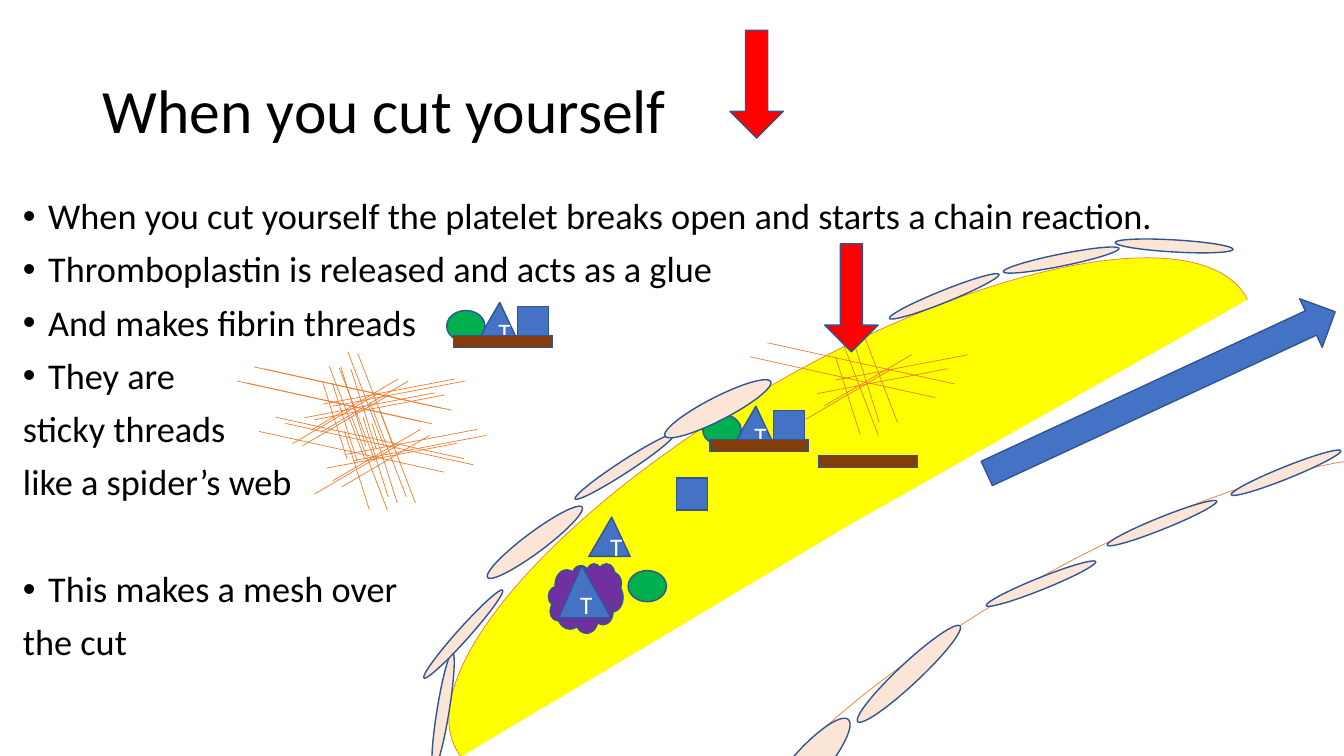
from dataclasses import dataclass

from lxml.etree import SubElement
from pptx import Presentation
from pptx.dml.color import RGBColor
from pptx.enum.shapes import MSO_CONNECTOR, MSO_SHAPE
from pptx.enum.text import MSO_ANCHOR, PP_ALIGN
from pptx.oxml.ns import qn
from pptx.slide import Slide
from pptx.util import Inches, Pt

COLORS = {
    "text": "000000", "letter": "FFFFFF", "edge": "325491", "thread": "ED7D31",
    "blue": "4472C4", "green": "00B050", "brown": "843C0B", "purple": "7030A0",
    "blood": "FFFF00", "skin": "FBE5D6", "red": "FF0000",
}
FONT = "Calibri"


@dataclass
class Piece:
    kind: MSO_SHAPE
    left: float
    top: float
    width: float
    height: float
    fill: str = ""
    turn: float = 0
    adjust: tuple[float, ...] = ()
    letter: str = ""
    edge: str = "edge"
    weight: float = 1


@dataclass
class Point:
    text: str
    bullet: bool = True
    before: float = 10


POINTS = [
    Point("When you cut yourself the platelet breaks open and starts a chain reaction."),
    Point("Thromboplastin is released and acts as a glue"),
    Point("And makes fibrin threads"),
    Point("They are"),
    Point("sticky threads", False),
    Point("like a spider’s web", False),
    Point("This makes a mesh over", before=48.4),
    Point("the cut", False),
]

# Threads of one bundle, as x and y of both ends from the bundle's origin
THREADS = [
    (0, 0, 1.86, 0.41),
    (0.68, 0.37, 1.99, 0.12),
    (0.93, -0.15, 1.29, 0.79),
    (0.56, 0.63, 1.43, 0.12),
    (0.86, 0, 1.11, 0.79),
]
WEBS = [(2.62, 3.66), (2.52, 3.64), (2.74, 4.14)]
CUT_WEB = (7.61, 3.4)

# Cells of the vessel wall: left, top, width, height, turn
CELLS = [
    (7.36, 7.45, 1.27, 0.33, 311.2),
    (8.32, 6.58, 1.39, 0.21, 316.9),
    (8.78, 2.88, 1.17, 0.12, 338.1),
    (9.74, 5.73, 1.17, 0.12, 338.1),
    (10.94, 5.13, 1.17, 0.12, 338.1),
    (12.17, 4.63, 1.17, 0.12, 338.1),
    (3.81, 6.99, 1.17, 0.12, 279.2),
    (4.01, 6.23, 1.17, 0.12, 311.8),
    (4.72, 5.28, 1.17, 0.2, 323.3),
    (5.61, 4.57, 1.17, 0.12, 326.9),
    (6.53, 3.94, 1.18, 0.23, 332.8),
    (11.06, 2.38, 1.17, 0.12, 3.3),
    (9.94, 2.52, 1.17, 0.12, 348.6),
]


def color(name: str) -> RGBColor:
    return RGBColor.from_string(COLORS[name])


def style(para, size: float, name: str) -> None:
    para.font.name = FONT
    para.font.size = Pt(size)
    para.font.color.rgb = color(name)


def draw(slide: Slide, piece: Piece) -> None:
    box = map(Inches, (piece.left, piece.top, piece.width, piece.height))
    shape = slide.shapes.add_shape(piece.kind, *box)
    shape.shadow.inherit = False
    shape.rotation = piece.turn
    for i, value in enumerate(piece.adjust):
        shape.adjustments[i] = value
    if piece.fill:
        shape.fill.solid()
        shape.fill.fore_color.rgb = color(piece.fill)
    else:
        shape.fill.background()
    shape.line.color.rgb = color(piece.edge)
    shape.line.width = Pt(piece.weight)
    if piece.letter:
        frame = shape.text_frame
        frame.vertical_anchor = MSO_ANCHOR.MIDDLE
        para = frame.paragraphs[0]
        para.text = piece.letter
        para.alignment = PP_ALIGN.CENTER
        style(para, 18, "letter")


def square(left: float, top: float) -> Piece:
    return Piece(MSO_SHAPE.RECTANGLE, left, top, 0.31, 0.32, "blue")


def oval(left: float, top: float) -> Piece:
    return Piece(MSO_SHAPE.OVAL, left, top, 0.38, 0.31, "green")


def bar(left: float, top: float) -> Piece:
    return Piece(MSO_SHAPE.RECTANGLE, left, top, 0.98, 0.12, "brown")


def glue(left: float, top: float) -> Piece:
    """Triangle that stands for thromboplastin."""
    return Piece(MSO_SHAPE.ISOSCELES_TRIANGLE, left, top, 0.41, 0.39, "blue",
                 adjust=(0.554,), letter="T")


def clump(left: float, top: float) -> list[Piece]:
    """Triangle, oval and square held together on a bar."""
    return [glue(left + 0.3, top), oval(left, top + 0.08),
            square(left + 0.7, top + 0.04), bar(left + 0.07, top + 0.33)]


def pointer(left: float, top: float) -> Piece:
    return Piece(MSO_SHAPE.DOWN_ARROW, left, top, 0.53, 1.07, "red",
                 adjust=(0.416, 0.5))


def vessel(left: float, top: float, height: float, fill: str = "") -> Piece:
    return Piece(MSO_SHAPE.ARC, left, top, 9.03, height, fill, 330.1,
                 (107.441, 0.233), edge="thread", weight=0.5)


def bundle(slide: Slide, left: float, top: float, scale: float = 1) -> None:
    for x1, y1, x2, y2 in THREADS:
        ends = (left + x1 * scale, top + y1 * scale,
                left + x2 * scale, top + y2 * scale)
        line = slide.shapes.add_connector(MSO_CONNECTOR.STRAIGHT, *map(Inches, ends))
        line.line.color.rgb = color("thread")
        line.line.width = Pt(0.5)
        SubElement(line._element.spPr, qn("a:effectLst"))


def web(slide: Slide, left: float, top: float) -> None:
    """Two bundles, the second a little smaller and shifted."""
    bundle(slide, left, top)
    bundle(slide, left - 0.17, top + 0.14, 0.985)


def write(slide: Slide) -> None:
    title = slide.shapes.title
    title.left, title.top, title.width, title.height = map(Inches, (0.92, 0.4, 11.5, 1.45))
    title.text_frame.vertical_anchor = MSO_ANCHOR.MIDDLE
    para = title.text_frame.paragraphs[0]
    para.text = "When you cut yourself"
    para.alignment = PP_ALIGN.LEFT
    para.line_spacing = 0.9
    style(para, 44, "text")

    frame = slide.shapes.add_textbox(*map(Inches, (0.13, 1.92, 11.5, 4.76))).text_frame
    frame.word_wrap = True
    for i, point in enumerate(POINTS):
        para = frame.add_paragraph() if i else frame.paragraphs[0]
        para.text = point.text
        para.line_spacing = 0.9
        para.space_before = Pt(point.before)
        if point.bullet:
            props = para._p.get_or_add_pPr()
            props.set("marL", str(Inches(0.25)))
            props.set("indent", str(-Inches(0.25)))
            SubElement(props, qn("a:buFont"), typeface="Arial")
            SubElement(props, qn("a:buChar"), char="•")
        style(para, 25.9, "text")


def main() -> None:
    deck = Presentation()
    deck.slide_width, deck.slide_height = Inches(13.33), Inches(7.5)
    slide = deck.slides.add_slide(deck.slide_layouts[5])
    write(slide)

    pieces = [
        vessel(6.37, 5.63, 2.99), vessel(3.93, 3.61, 3.17, "blood"),
        square(6.71, 4.74), oval(6.23, 5.66), bar(8.12, 4.52),
        Piece(MSO_SHAPE.CLOUD, 5.44, 5.59, 0.74, 0.69, "purple"),
        Piece(MSO_SHAPE.ISOSCELES_TRIANGLE, 5.54, 5.61, 0.52, 0.52, "blue",
              adjust=(0.44,), letter="T"),
        *clump(6.97, 4.03), *clump(4.43, 3),
    ]
    for piece in pieces:
        draw(slide, piece)

    bundle(slide, 2.83, 4.2)
    for spot in (CUT_WEB, *WEBS):
        web(slide, *spot)

    walls = [Piece(MSO_SHAPE.OVAL, *cell[:4], "skin", cell[4]) for cell in CELLS]
    flow = Piece(MSO_SHAPE.RIGHT_ARROW, 9.61, 3.63, 3.81, 0.53, "blue", 335.1)
    for piece in (pointer(8.18, 2.42), pointer(7.24, 0.3), glue(5.84, 5.13), *walls, flow):
        draw(slide, piece)
    deck.save("out.pptx")


if __name__ == "__main__":
    main()
